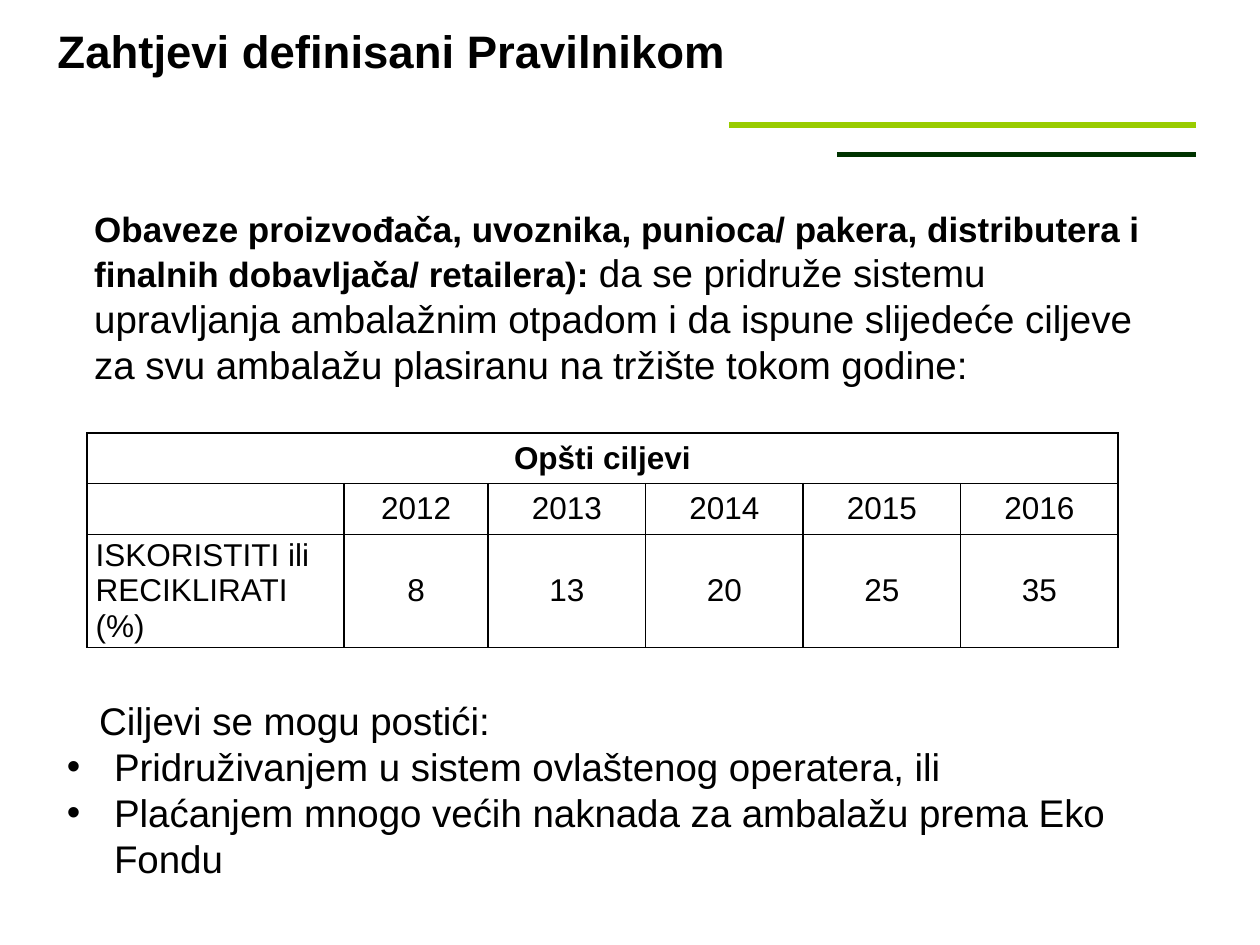
from lxml import etree
from pptx import Presentation, util as u
from pptx.dml.color import RGBColor
from pptx.enum import shapes, text
from pptx.oxml import ns

FONT = "Arial"
BLACK = "000000"
YEARS = ["2012", "2013", "2014", "2015", "2016"]
TARGETS = ["8", "13", "20", "25", "35"]


def color(value):
    """Turn a hex string into a colour."""
    return RGBColor.from_string(value)


def set_font(font, size, bold=False):
    """Apply the slide's typeface in black."""
    font.name, font.size, font.bold = FONT, u.Pt(size), bold
    font.color.rgb = color(BLACK)


def add_box(s, x, y, w, h):
    """Add a wrapping text box and return its frame."""
    tf = s.shapes.add_textbox(u.Cm(x), u.Cm(y), u.Cm(w), u.Cm(h)).text_frame
    tf.word_wrap = True
    return tf


def add_title(s, x, y, w, h):
    """Place the slide title."""
    p = add_box(s, x, y, w, h).paragraphs[0]
    p.text = "Zahtjevi definisani Pravilnikom"
    set_font(p.font, 26, True)


def add_rules(s, x, y, w, gap):
    """Draw the two rules, aligned at their right ends."""
    for i, (indent, value) in enumerate([(0, "99CC00"), (2.18, "003300")]):
        top = u.Cm(y + i * gap)
        line = s.shapes.add_connector(
            shapes.MSO_CONNECTOR.STRAIGHT, u.Cm(x + indent), top, u.Cm(x + w), top)
        line.line.color.rgb = color(value)
        line.line.width = u.Pt(3)
        etree.SubElement(line._element.spPr, ns.qn("a:effectLst"))


def add_duties(s, x, y, w, h):
    """Place the paragraph on duties with its bold opening."""
    p = add_box(s, x, y, w, h).paragraphs[0]
    parts = [
        ("Obaveze proizvođača, uvoznika, punioca/ pakera, distributera i "
         "finalnih dobavljača/ retailera): ", 20, True),
        ("da se pridruže sistemu upravljanja ambalažnim otpadom i da ispune "
         "slijedeće ciljeve za svu ambalažu plasiranu na tržište tokom godine:", 22, False),
    ]
    for words, size, bold in parts:
        r = p.add_run()
        r.text = words
        set_font(r.font, size, bold)


def set_borders(cell):
    """Draw a thin black line on each side of a cell."""
    tc_pr = cell._tc.get_or_add_tcPr()
    for i, side in enumerate(["lnL", "lnR", "lnT", "lnB"]):
        ln = etree.Element(ns.qn(f"a:{side}"), w=str(u.Pt(1)))
        fill = etree.SubElement(ln, ns.qn("a:solidFill"))
        etree.SubElement(fill, ns.qn("a:srgbClr"), val=BLACK)
        tc_pr.insert(i, ln)


def add_targets(s, x, y, w, h):
    """Place the table of yearly targets."""
    rows = [["Opšti ciljevi"] + [""] * 5, [""] + YEARS,
            ["ISKORISTITI ili RECIKLIRATI (%)"] + TARGETS]
    table = s.shapes.add_table(3, 6, u.Cm(x), u.Cm(y), u.Cm(w), u.Cm(h)).table
    for col, share in zip(table.columns, [0.25, 0.14] + [0.153] * 4):
        col.width = u.Cm(w * share)
    for row, share in zip(table.rows, [0.24, 0.24, 0.52]):
        row.height = u.Cm(h * share)
    for i, values in enumerate(rows):
        for j, value in enumerate(values):
            cell = table.cell(i, j)
            cell.fill.background()
            set_borders(cell)
            cell.vertical_anchor = text.MSO_ANCHOR.MIDDLE
            cell.margin_left = cell.margin_right = u.Cm(0.18)
            cell.margin_top = cell.margin_bottom = 0
            p = cell.text_frame.paragraphs[0]
            p.text = value
            label = (i, j) == (2, 0)
            p.alignment = text.PP_ALIGN.LEFT if label else text.PP_ALIGN.CENTER
            set_font(p.font, 18, i == 0)
    table.cell(0, 0).merge(table.cell(0, 5))


def set_indent(p, left, first=0, bullet=None):
    """Set a paragraph's indents and optional bullet."""
    p_pr = p._p.get_or_add_pPr()
    p_pr.set("marL", str(u.Cm(left)))
    p_pr.set("indent", str(u.Cm(first)))
    if bullet:
        etree.SubElement(p_pr, ns.qn("a:buFont"), typeface=FONT)
        etree.SubElement(p_pr, ns.qn("a:buChar"), char=bullet)


def add_options(s, x, y, w, h):
    """Place the lead-in and the bulleted ways to reach the targets."""
    tf = add_box(s, x, y, w, h)
    lines = ["Ciljevi se mogu postići:",
             "Pridruživanjem u sistem ovlaštenog operatera, ili",
             "Plaćanjem mnogo većih naknada za ambalažu prema Eko Fondu"]
    for i, line in enumerate(lines):
        p = tf.add_paragraph() if i else tf.paragraphs[0]
        p.text = line
        if i:
            set_indent(p, 0.95, -0.95, "•")
        else:
            set_indent(p, 0.65)
        set_font(p.font, 22)


def main():
    """Build and save the slide."""
    prs = Presentation()
    prs.slide_width, prs.slide_height = u.Cm(25.4), u.Cm(19.05)
    s = prs.slides.add_slide(prs.slide_layouts[6])
    add_rules(s, 14.7, 2.52, 9.4, 0.6)
    add_duties(s, 1.65, 4.05, 22.2, 3.95)
    add_targets(s, 1.75, 8.73, 20.75, 4.25)
    add_options(s, 1.1, 13.92, 22.2, 4)
    add_title(s, 0.91, 0.33, 18.4, 2.4)
    prs.save("out.pptx")


if __name__ == "__main__":
    main()
